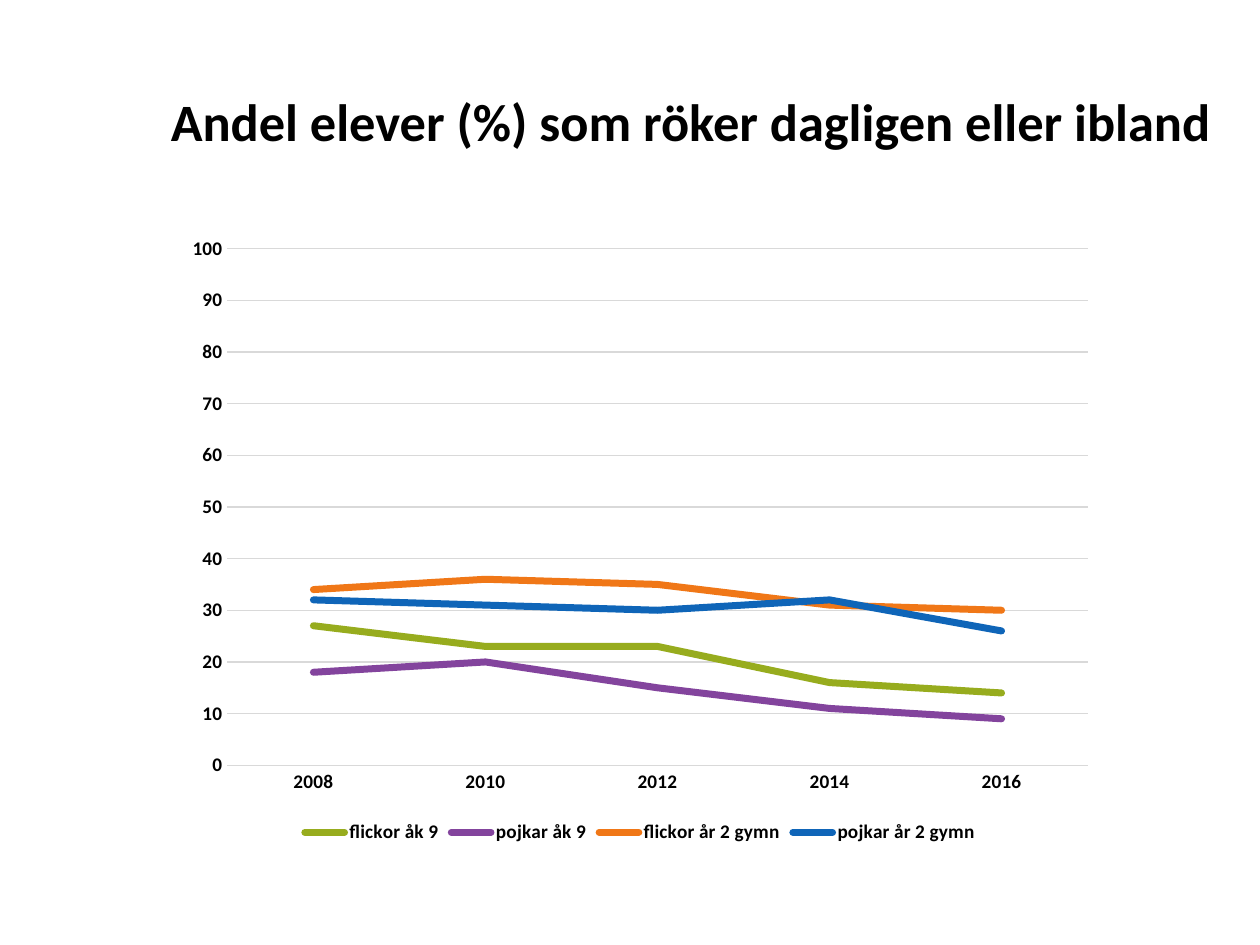
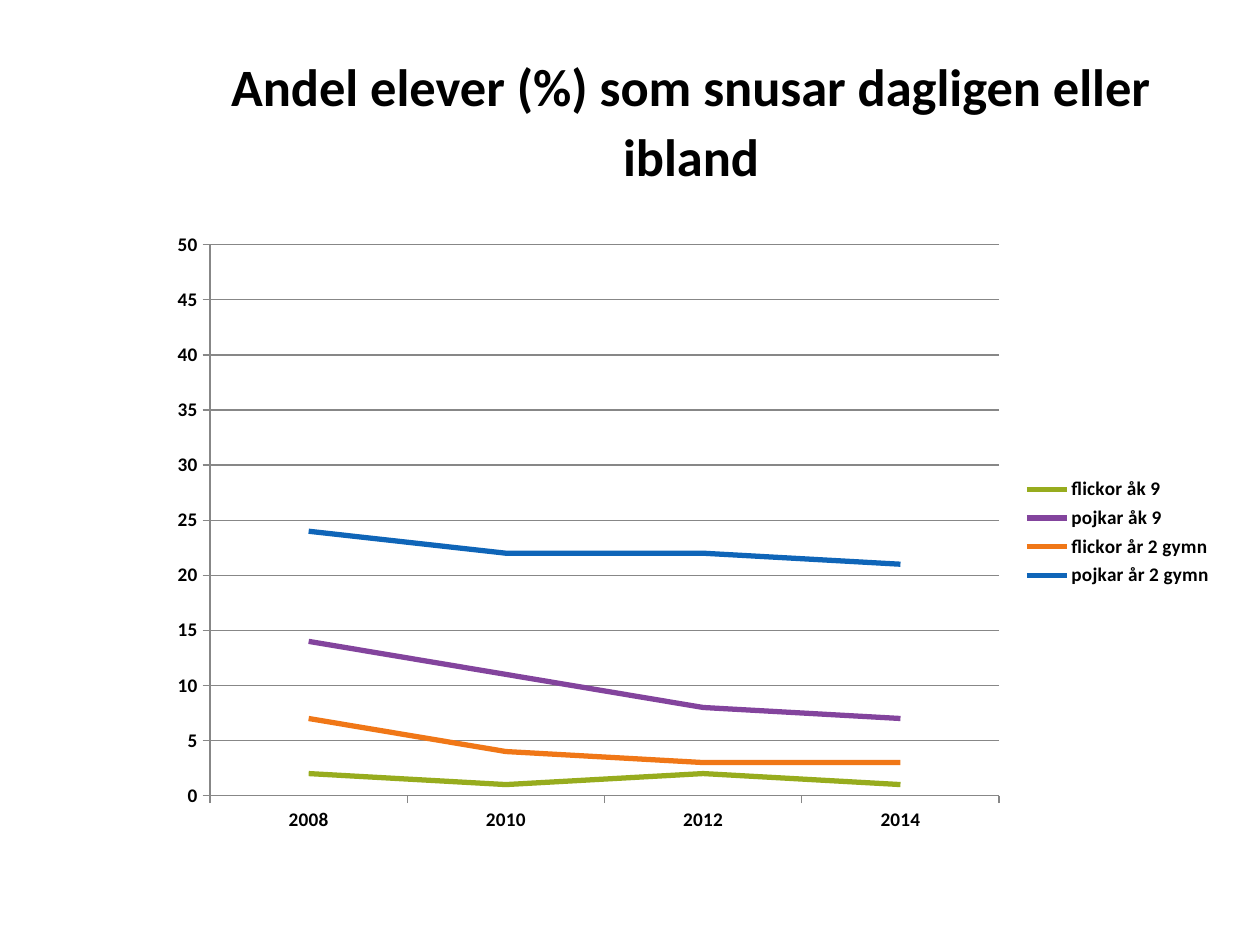
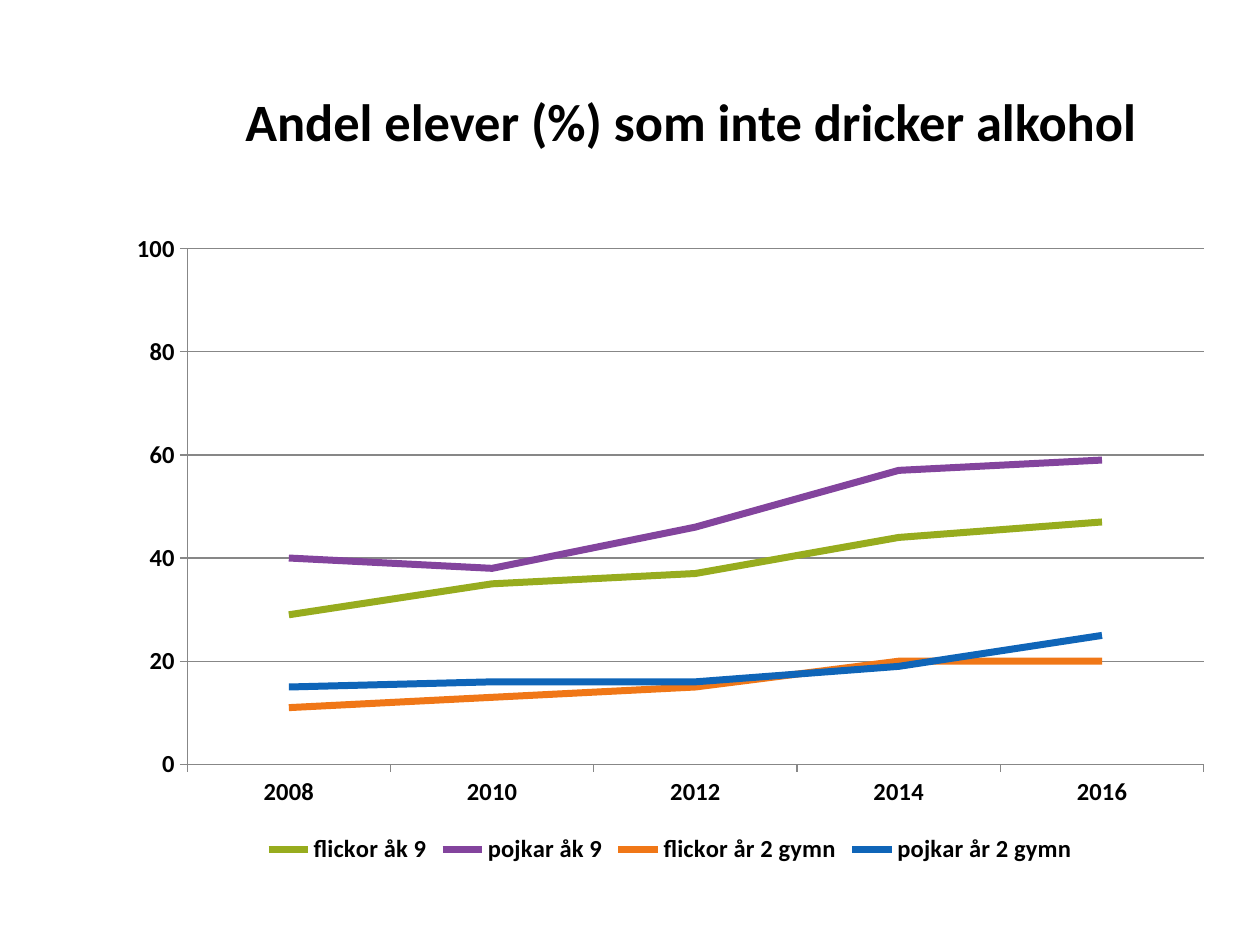
from dataclasses import dataclass

from pptx import Presentation
from pptx.chart.axis import CategoryAxis, ValueAxis
from pptx.chart.data import CategoryChartData
from pptx.dml.color import RGBColor
from pptx.enum.chart import XL_CHART_TYPE, XL_LEGEND_POSITION, XL_TICK_MARK
from pptx.enum.text import MSO_ANCHOR, PP_ALIGN
from pptx.slide import Slide
from pptx.text.text import Font
from pptx.util import Inches, Pt

LINE_CHART = XL_CHART_TYPE.LINE
BOTTOM, RIGHT = XL_LEGEND_POSITION.BOTTOM, XL_LEGEND_POSITION.RIGHT
TICK_NONE, TICK_OUT = XL_TICK_MARK.NONE, XL_TICK_MARK.OUTSIDE
MIDDLE, CENTER = MSO_ANCHOR.MIDDLE, PP_ALIGN.CENTER

# Shared look
FONT = "Calibri"
COLORS = {
    "text": "000000",
    "background": "FFFFFF",
    "light_grid": "D9D9D9",
    "dark_grid": "878787",
    "flickor åk 9": "97AC1E",
    "pojkar åk 9": "83449D",
    "flickor år 2 gymn": "F07717",
    "pojkar år 2 gymn": "0F65B8",
}
GROUPS = ("flickor åk 9", "pojkar åk 9", "flickor år 2 gymn", "pojkar år 2 gymn")
FIRST_YEAR, YEAR_STEP = 2008, 2
TITLE_BOX = (1.24, 0.3, 8.49, 1.25)


@dataclass(frozen=True)
class SurveySlide:
    title: str
    box: tuple[float, float, float, float]
    values: tuple[tuple[int, ...], ...]  # one row per group
    maximum: int
    step: int
    line_width: float
    text_size: int = 11
    legend: XL_LEGEND_POSITION = BOTTOM
    light: bool = False  # pale grid, no ticks, rounded line ends


SURVEY_SLIDES = (
    SurveySlide(
        "Andel elever (%) som röker dagligen eller ibland",
        (1.38, 1.78, 7.4, 4.96),
        ((27, 23, 23, 16, 14), (18, 20, 15, 11, 9),
         (34, 36, 35, 31, 30), (32, 31, 30, 32, 26)),
        maximum=100, step=10, line_width=4, light=True,
    ),
    SurveySlide(
        "Andel elever (%) som snusar dagligen eller ibland",
        (1.24, 1.75, 8.49, 4.95),
        ((2, 1, 2, 1), (14, 11, 8, 7), (7, 4, 3, 3), (24, 22, 22, 21)),
        maximum=50, step=5, line_width=3, legend=RIGHT,
    ),
    SurveySlide(
        "Andel elever (%) som inte dricker alkohol",
        (0.91, 1.75, 8.82, 5.15),
        ((29, 35, 37, 44, 47), (40, 38, 46, 57, 59),
         (11, 13, 15, 20, 20), (15, 16, 16, 19, 25)),
        maximum=100, step=20, line_width=4, text_size=14,
    ),
)


def color(name: str) -> RGBColor:
    return RGBColor.from_string(COLORS[name])


def apply(target: object, values: dict[str, object]) -> None:
    for name, value in values.items():
        setattr(target, name, value)


def style_font(font: Font, size: int) -> None:
    apply(font, {"name": FONT, "size": Pt(size), "bold": True})
    font.color.rgb = color("text")


def add_title(slide: Slide, text: str) -> None:
    frame = slide.shapes.add_textbox(*map(Inches, TITLE_BOX)).text_frame
    apply(frame, {"word_wrap": True, "vertical_anchor": MIDDLE})
    paragraph = frame.paragraphs[0]
    apply(paragraph, {"alignment": CENTER, "line_spacing": Pt(40)})
    run = paragraph.add_run()
    run.text = text
    style_font(run.font, 30)


def style_axes(category_axis: CategoryAxis, value_axis: ValueAxis,
               survey: SurveySlide) -> None:
    apply(value_axis, {"minimum_scale": 0, "maximum_scale": survey.maximum,
                       "major_unit": survey.step, "has_major_gridlines": True})
    for axis in (category_axis, value_axis):
        apply(axis, {"major_tick_mark": TICK_NONE if survey.light else TICK_OUT,
                     "minor_tick_mark": TICK_NONE})
        style_font(axis.tick_labels.font, survey.text_size)
    grid_color = color("light_grid" if survey.light else "dark_grid")
    for part in (category_axis, value_axis, value_axis.major_gridlines):
        part.format.line.color.rgb = grid_color
        part.format.line.width = Pt(0.75)
    if survey.light:
        value_axis.format.line.fill.background()


def add_line_chart(slide: Slide, survey: SurveySlide) -> None:
    data = CategoryChartData()
    data.categories = [str(FIRST_YEAR + YEAR_STEP * index)
                       for index in range(len(survey.values[0]))]
    for group, values in zip(GROUPS, survey.values):
        data.add_series(group, values)
    chart = slide.shapes.add_chart(
        LINE_CHART, *map(Inches, survey.box), data).chart
    apply(chart, {"has_title": False, "has_legend": True})
    style_font(chart.font, 11)
    apply(chart.legend, {"position": survey.legend, "include_in_layout": False})
    style_font(chart.legend.font, survey.text_size)
    style_axes(chart.category_axis, chart.value_axis, survey)
    plot = chart.plots[0]
    plot.vary_by_categories = False
    for series in plot.series:
        series.smooth = False
        series.format.line.color.rgb = color(series.name)
        series.format.line.width = Pt(survey.line_width)
        if survey.light:
            series.format.line._get_or_add_ln().set("cap", "rnd")


def main() -> None:
    presentation = Presentation()
    apply(presentation, {"slide_width": Inches(10), "slide_height": Inches(7.5)})
    blank_layout = presentation.slide_layouts[6]
    for survey in SURVEY_SLIDES:
        slide = presentation.slides.add_slide(blank_layout)
        slide.background.fill.solid()
        slide.background.fill.fore_color.rgb = color("background")
        add_title(slide, survey.title)
        add_line_chart(slide, survey)
    presentation.save("out.pptx")


if __name__ == "__main__":
    main()
